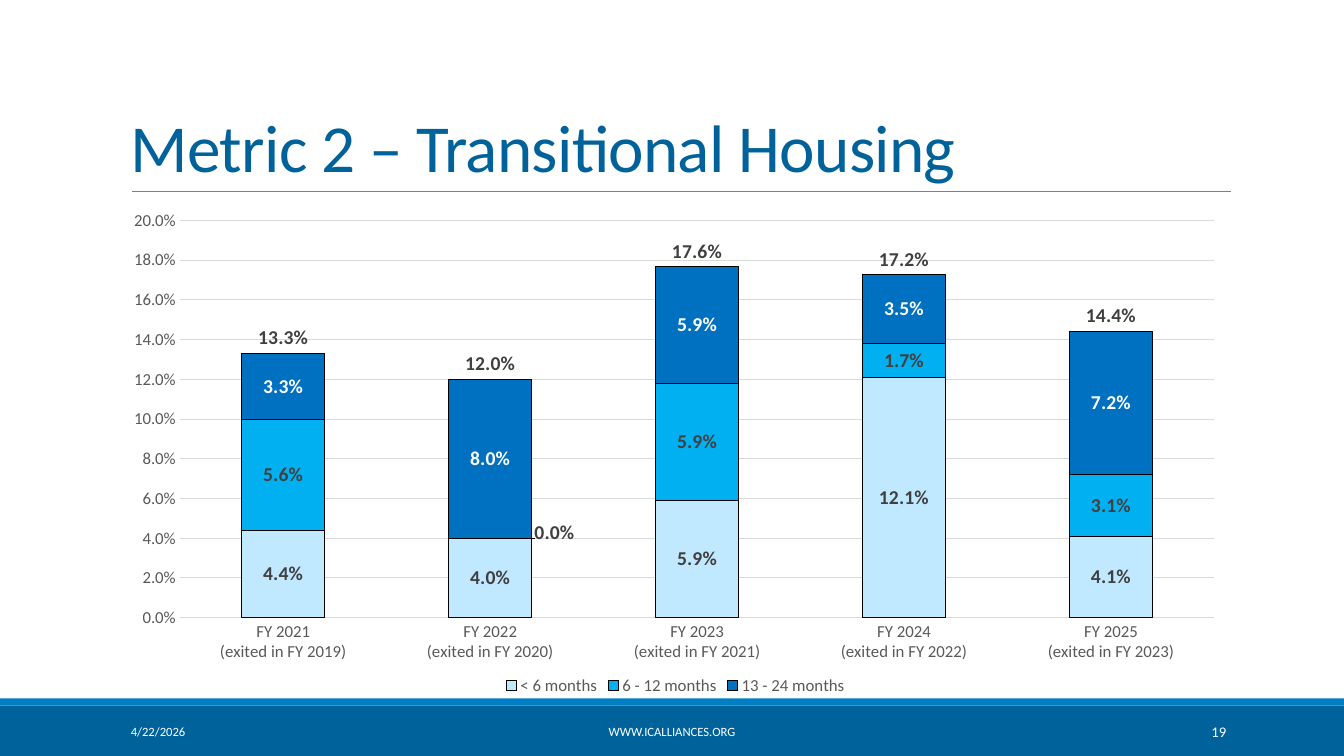
from dataclasses import dataclass

from lxml.etree import SubElement
from pptx import Presentation
from pptx.chart.data import CategoryChartData
from pptx.dml.color import RGBColor
from pptx.enum.chart import (XL_CHART_TYPE, XL_LABEL_POSITION, XL_LEGEND_POSITION,
                             XL_MARKER_STYLE, XL_TICK_MARK)
from pptx.enum.shapes import MSO_CONNECTOR, MSO_SHAPE
from pptx.enum.text import MSO_ANCHOR, PP_ALIGN
from pptx.oxml import parse_xml
from pptx.oxml.ns import nsdecls, qn
from pptx.util import Inches, Pt


@dataclass(frozen=True)
class Theme:
    font: str = "Calibri"
    brand: str = "00629B"
    accent: str = "007EC4"
    rule: str = "808080"
    grid: str = "D9D9D9"
    axis_text: str = "595959"
    label_text: str = "404040"
    white: str = "FFFFFF"
    black: str = "000000"
    title_size: float = 48
    label_size: float = 14
    axis_size: float = 12
    footer_size: float = 9
    number_size: float = 10.5


THEME = Theme()
PERCENT = "0.0%"
CATEGORIES = [f"FY {year}\n(exited in FY {year - 2})" for year in range(2021, 2026)]
STAYS = [
    ("< 6 months", (0.044, 0.04, 0.059, 0.121, 0.041), "C0E9FF", THEME.label_text),
    ("6 - 12 months", (0.056, 0, 0.059, 0.017, 0.031), "00B0F0", THEME.label_text),
    ("13 - 24 months", (0.033, 0.08, 0.059, 0.035, 0.072), "0070C0", THEME.white),
]
TOTALS = ("Series 4", (0.133, 0.12, 0.176, 0.172, 0.144))


def style_font(font, size, color, bold=False):
    font.name = THEME.font
    font.size = Pt(size)
    font.bold = bold
    font.color.rgb = RGBColor.from_string(color)


def style_line(line, color, width):
    line.color.rgb = RGBColor.from_string(color)
    line.width = Pt(width)


def add_band(slide, top, height, color):
    shape = slide.shapes.add_shape(MSO_SHAPE.RECTANGLE, 0, Inches(top), Inches(13.33), Inches(height))
    shape.shadow.inherit = False
    shape.fill.solid()
    shape.fill.fore_color.rgb = RGBColor.from_string(color)
    shape.line.fill.background()


def add_rule(slide, left, right, top):
    connector = slide.shapes.add_connector(
        MSO_CONNECTOR.STRAIGHT, Inches(left), Inches(top), Inches(right), Inches(top))
    style_line(connector.line, THEME.rule, 0.5)
    SubElement(connector._element.spPr, qn("a:effectLst"))


def add_text(slide, text, bounds, size, color, align=PP_ALIGN.LEFT, anchor=MSO_ANCHOR.MIDDLE):
    text_frame = slide.shapes.add_textbox(*(Inches(length) for length in bounds)).text_frame
    text_frame.word_wrap = True
    text_frame.vertical_anchor = anchor
    text_frame.text = text
    paragraph = text_frame.paragraphs[0]
    paragraph.alignment = align
    style_font(paragraph.runs[0].font, size, color)
    return paragraph


def add_title(slide, text):
    paragraph = add_text(slide, text, (1.2, 0.31, 11, 1.59), THEME.title_size, THEME.brand,
                         anchor=MSO_ANCHOR.BOTTOM)
    paragraph.line_spacing = 0.85
    paragraph.runs[0]._r.get_or_add_rPr().set("spc", "-50")


def layout_xml(x, y, extra=""):
    return parse_xml(f'<c:layout {nsdecls("c")}><c:manualLayout>{extra}'
                     f'<c:x val="{x}"/><c:y val="{y}"/></c:manualLayout></c:layout>')


def place_plot(chart):
    plot_area = chart.element.xpath("c:chart/c:plotArea")[0]
    for layout in plot_area.findall(qn("c:layout")):
        plot_area.remove(layout)
    layout = layout_xml(0.053, 0.057, '<c:layoutTarget val="inner"/>'
                        '<c:xMode val="edge"/><c:yMode val="edge"/>')
    for tag, value in (("c:w", "0.933"), ("c:h", "0.782")):
        SubElement(layout[0], qn(tag)).set("val", value)
    plot_area.insert(0, layout)


def move_totals_to_line(chart):
    bar_chart = chart.element.xpath(".//c:barChart")[0]
    totals = bar_chart.findall(qn("c:ser"))[-1]
    for element in totals.findall(qn("c:invertIfNegative")):
        totals.remove(element)
    line_chart = parse_xml(f'<c:lineChart {nsdecls("c")}><c:grouping val="standard"/>'
                           '<c:varyColors val="0"/><c:marker val="1"/></c:lineChart>')
    line_chart.insert(2, totals)
    for axis_id in bar_chart.findall(qn("c:axId")):
        SubElement(line_chart, qn("c:axId")).set("val", axis_id.get("val"))
    bar_chart.addnext(line_chart)


def label_series(series, color, position):
    labels = series.data_labels
    labels.show_value = True
    labels.number_format = PERCENT
    labels.number_format_is_linked = False
    labels.position = position
    style_font(labels.font, THEME.label_size, color, bold=True)


def shift_label(chart, series, index, x, y):
    style_font(series.points[index].data_label.font, THEME.label_size, THEME.label_text, bold=True)
    label = chart.element.xpath(f'.//c:dLbl[c:idx/@val="{index}"]')[0]
    label.insert(1, layout_xml(x, y))
    label.insert(2, parse_xml(
        f'<c:numFmt {nsdecls("c")} formatCode="{PERCENT}" sourceLinked="0"/>'))


def style_axes(chart):
    for axis in (chart.category_axis, chart.value_axis):
        axis.major_tick_mark = axis.minor_tick_mark = XL_TICK_MARK.NONE
        style_font(axis.tick_labels.font, THEME.axis_size, THEME.axis_text)
    style_line(chart.category_axis.format.line, THEME.grid, 0.75)
    value_axis = chart.value_axis
    value_axis.minimum_scale, value_axis.maximum_scale, value_axis.major_unit = 0, 0.2, 0.02
    value_axis.tick_labels.number_format = PERCENT
    value_axis.tick_labels.number_format_is_linked = False
    value_axis.format.line.fill.background()
    style_line(value_axis.major_gridlines.format.line, THEME.grid, 0.75)


def add_legend(chart, hidden_index):
    chart.has_legend = True
    chart.legend.position = XL_LEGEND_POSITION.BOTTOM
    chart.legend.include_in_layout = False
    style_font(chart.legend.font, THEME.axis_size, THEME.axis_text)
    chart.element.xpath(".//c:legendPos")[0].addnext(parse_xml(
        f'<c:legendEntry {nsdecls("c")}><c:idx val="{hidden_index}"/>'
        '<c:delete val="1"/></c:legendEntry>'))


def add_housing_chart(slide):
    data = CategoryChartData(number_format=PERCENT)
    data.categories = CATEGORIES
    for name, values, *_ in [*STAYS, TOTALS]:
        data.add_series(name, values)
    chart = slide.shapes.add_chart(XL_CHART_TYPE.COLUMN_STACKED, Inches(1.2), Inches(1.9),
                                   Inches(11), Inches(5.04), data).chart
    chart.has_title = False
    style_font(chart.font, 10, THEME.black)
    move_totals_to_line(chart)
    columns, line = chart.plots
    columns.gap_width, columns.overlap = 150, 100
    columns.vary_by_categories = False
    for series, (_, _, color, label_color) in zip(columns.series, STAYS):
        series.format.fill.solid()
        series.format.fill.fore_color.rgb = RGBColor.from_string(color)
        style_line(series.format.line, THEME.black, 0.75)
        label_series(series, label_color, XL_LABEL_POSITION.CENTER)
    shift_label(chart, columns.series[1], 1, 0.058, -0.01)
    totals = line.series[0]
    totals.smooth = False
    totals.marker.style = XL_MARKER_STYLE.NONE
    totals.format.line.fill.background()
    label_series(totals, THEME.label_text, XL_LABEL_POSITION.ABOVE)
    style_axes(chart)
    add_legend(chart, len(STAYS))
    place_plot(chart)


def main():
    presentation = Presentation()
    presentation.slide_width, presentation.slide_height = Inches(13.33), Inches(7.5)
    slide = presentation.slides.add_slide(presentation.slide_layouts[6])
    add_band(slide, 7, 0.5, THEME.brand)
    add_band(slide, 6.93, 0.07, THEME.accent)
    add_rule(slide, 1.31, 12.21, 1.9)
    add_title(slide, "Metric 2 – Transitional Housing")
    add_housing_chart(slide)
    for text, left, width, size, align in (
            ("4/22/2026", 1.2, 2.7, THEME.footer_size, PP_ALIGN.LEFT),
            ("WWW.ICALLIANCES.ORG", 4.03, 5.27, THEME.footer_size, PP_ALIGN.CENTER),
            ("19", 10.83, 1.43, THEME.number_size, PP_ALIGN.RIGHT)):
        add_text(slide, text, (left, 7.06, width, 0.4), size, THEME.white, align)
    presentation.save("out.pptx")


if __name__ == "__main__":
    main()
